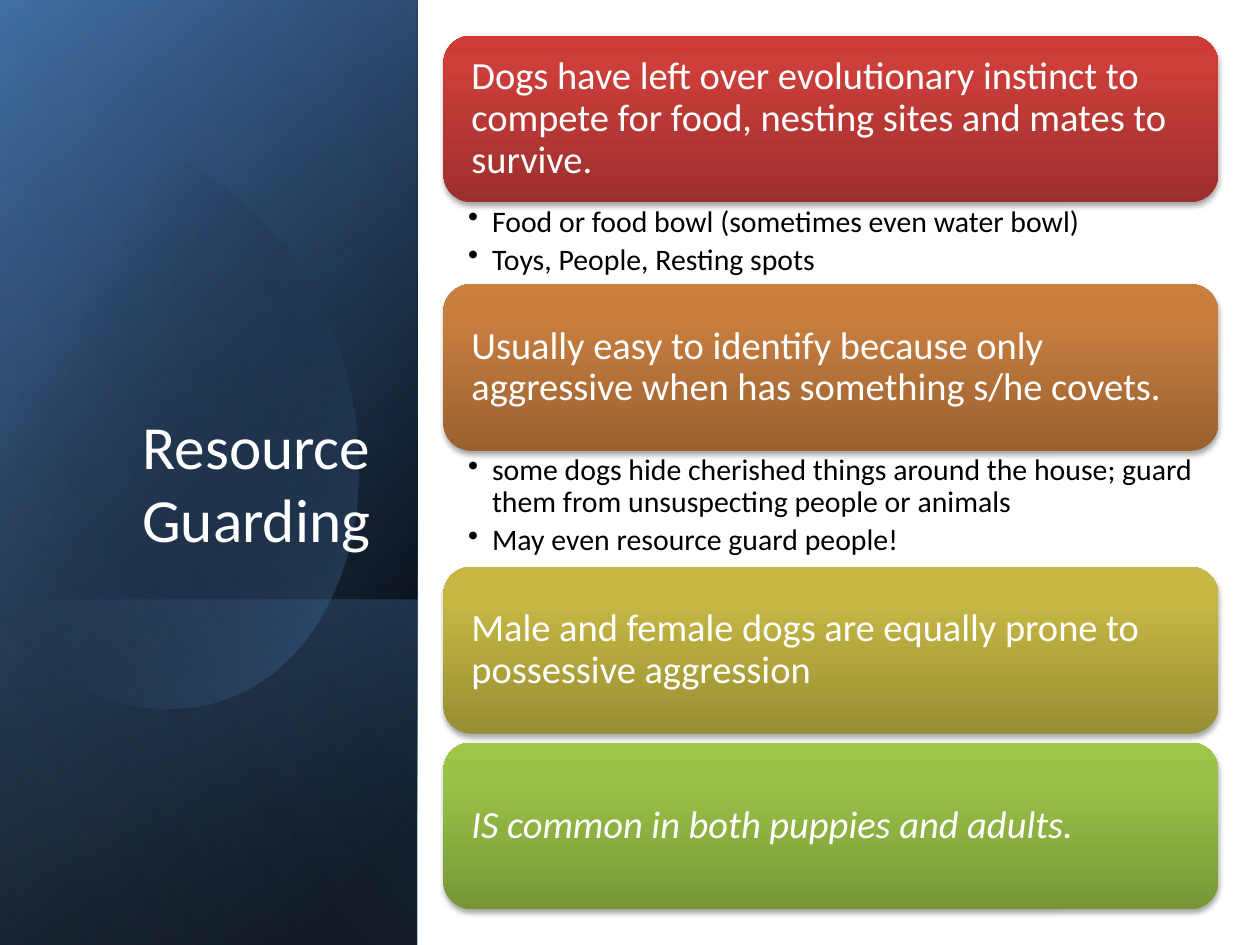
from lxml import etree
from pptx import Presentation
from pptx.dml.color import RGBColor
from pptx.enum.shapes import MSO_SHAPE
from pptx.enum.text import MSO_ANCHOR, PP_ALIGN
from pptx.oxml import parse_xml
from pptx.oxml.ns import qn
from pptx.util import Cm, Pt

RECT, ROUNDED = MSO_SHAPE.RECTANGLE, MSO_SHAPE.ROUNDED_RECTANGLE
TOP, MIDDLE, BOTTOM = MSO_ANCHOR.TOP, MSO_ANCHOR.MIDDLE, MSO_ANCHOR.BOTTOM
LEFT, RIGHT = PP_ALIGN.LEFT, PP_ALIGN.RIGHT
NS = 'xmlns:a="http://schemas.openxmlformats.org/drawingml/2006/main"'


def paint(shape, stops, angle):
    """Fill with a linear gradient of (position %, colour, opacity %) stops, no outline."""
    shape.line.fill.background()
    shape.shadow.inherit = False
    shape.fill.background()
    stop_xml = "".join(
        f'<a:gs pos="{pos * 1000}"><a:srgbClr val="{color}">'
        f'<a:alpha val="{opacity * 1000}"/></a:srgbClr></a:gs>'
        for pos, color, opacity in stops)
    gradient = parse_xml(
        f'<a:gradFill {NS} rotWithShape="1"><a:gsLst>{stop_xml}</a:gsLst>'
        f'<a:lin ang="{angle * 60000}" scaled="0"/></a:gradFill>')
    properties = shape._element.spPr
    properties.replace(properties.find(qn("a:noFill")), gradient)


def write(shape, lines, size, color, anchor, align, insets, spacing=0.9,
          italic=False, bulleted=False):
    """Write one paragraph per line; insets are left, top, right, bottom in cm."""
    frame = shape.text_frame
    left, top, right, bottom = map(Cm, insets)
    frame_format = {"word_wrap": True, "vertical_anchor": anchor, "margin_left": left,
                    "margin_top": top, "margin_right": right, "margin_bottom": bottom}
    for key, value in frame_format.items():
        setattr(frame, key, value)
    for number, line in enumerate(lines):
        paragraph = frame.add_paragraph() if number else frame.paragraphs[0]
        paragraph.alignment = align
        paragraph.line_spacing = spacing
        if bulleted:
            paragraph.space_after = Pt(3.4)
            settings = paragraph._p.get_or_add_pPr()
            settings.set("marL", str(Cm(0.48)))
            settings.set("indent", str(-Cm(0.48)))
            etree.SubElement(settings, qn("a:buChar")).set("char", "•")
        run = paragraph.add_run()
        run.text = line
        for key, value in {"name": "Calibri", "size": Pt(size), "italic": italic}.items():
            setattr(run.font, key, value)
        run.font.color.rgb = RGBColor.from_string(color)


SLIDE_W, SLIDE_H = 25.4, 19.05
prs = Presentation()
prs.slide_width, prs.slide_height = Cm(SLIDE_W), Cm(SLIDE_H)
slide = prs.slides.add_slide(prs.slide_layouts[6])
shapes = slide.shapes

# Left panel: stacked gradients, turned a quarter and standing on the bottom edge
PANEL_W = 8.41
panel_layers = [
    (SLIDE_H, [(8, "000000", 100), (100, "376092", 100)], 50),
    (SLIDE_H, [(0, "000000", 0), (99, "4F81BD", 46)], 30),
    (6.96, [(2, "4F81BD", 29), (100, "000000", 30)], 130),
    ("oval", [(29, "000000", 0), (100, "4F81BD", 43)], 30),
    (SLIDE_H, [(0, "000000", 0), (99, "95B3D7", 11)], 120),
]

# Cut-off oval in cm: a start point, then curves (three points) and lines (one point)
oval_start = (2.44, 2.9)
oval_segments = [
    [(4.34, 3.1), (6.2, 4.88), (6.93, 7.37)],
    [(7.8, 10.46), (6.65, 13.49), (4.34, 14.15)],
    [(2.9, 14.58), (1.35, 13.97), (0.18, 12.7)],
    [(-0.08, 12.4)],
    [(-0.64, 4.22)],
    [(-0.38, 3.91)],
    [(0.05, 3.48), (0.56, 3.18), (1.14, 3)],
    [(1.57, 2.87), (2.01, 2.84), (2.44, 2.9)],
]
STEPS = 16
oval_points = [oval_start]
for segment in oval_segments:
    if len(segment) == 1:
        oval_points += segment
        continue
    corners = [oval_points[-1]] + segment
    for step in range(1, STEPS + 1):
        t = step / STEPS
        weights = ((1 - t) ** 3, 3 * t * (1 - t) ** 2, 3 * t * t * (1 - t), t ** 3)
        oval_points.append(tuple(
            sum(w * corner[axis] for w, corner in zip(weights, corners))
            for axis in (0, 1)))

for height, stops, angle in panel_layers:
    if height == "oval":
        points = [(Cm(x), Cm(y)) for x, y in oval_points]
        builder = shapes.build_freeform(*points[0])
        builder.add_line_segments(points[1:], close=True)
        layer = builder.convert_to_shape()
    else:
        layer = shapes.add_shape(
            RECT, Cm((PANEL_W - height) / 2), Cm(SLIDE_H - (height + PANEL_W) / 2),
            Cm(height), Cm(PANEL_W))
        layer.rotation = 90
        layer._element.spPr.xfrm.set("flipH", "1")
    paint(layer, stops, angle)

# Title
title = shapes.add_textbox(Cm(1.22), Cm(4.67), Cm(6.5), Cm(6.65))
write(title, ["Resource Guarding"], 35, "FFFFFF", BOTTOM, RIGHT,
      (0.25, 0.13, 0.25, 0.13), spacing=1.0)

# Cards, each followed by its bullets or by a small gap
CARD_X, CARD_W, CARD_H, GAP = 8.94, 15.62, 3.36, 0.18
cards = [
    ("Dogs have left over evolutionary instinct to compete for food, nesting sites "
     "and mates to survive.", ("9C2F2D", "CB3E3A", "CE3B37"), 1.65,
     ["Food or food bowl (sometimes even water bowl)", "Toys, People, Resting spots"]),
    ("Usually easy to identify because only aggressive when has something s/he covets.",
     ("9A6130", "C87E3F", "CC7E3C"), 2.34,
     ["some dogs hide cherished things around the house; guard them from "
      "unsuspecting people or animals", "May even resource guard people!"]),
    ("Male and female dogs are equally prone to possessive aggression",
     ("988E34", "C6B843", "C9BB41"), GAP, []),
    ("IS common in both puppies and adults.",
     ("779737", "9BC348", "9DC746"), GAP, []),
]
card_top = 0.72
for statement, colors, space_below, examples in cards:
    card = shapes.add_shape(ROUNDED, Cm(CARD_X), Cm(card_top), Cm(CARD_W), Cm(CARD_H))
    paint(card, [(pos, color, 100) for pos, color in zip((0, 80, 100), colors)], 270)
    card._element.spPr.find(qn("a:effectLst")).append(parse_xml(
        f'<a:outerShdw {NS} blurRad="{Pt(3.1)}" dist="{Pt(1.8)}" dir="5400000" '
        'rotWithShape="0"><a:srgbClr val="000000"><a:alpha val="35000"/></a:srgbClr>'
        '</a:outerShdw>'))
    write(card, [statement], 22, "FFFFFF", MIDDLE, LEFT, (0.4, 0.23, 0.4, 0.23),
          italic=statement.startswith("IS"))
    card_top += CARD_H
    if examples:
        example_list = shapes.add_textbox(
            Cm(CARD_X), Cm(card_top), Cm(CARD_W), Cm(space_below))
        write(example_list, examples, 17, "000000", TOP, LEFT,
              (0.5, 0.08, 0.43, 0.08), bulleted=True)
    card_top += space_below

prs.save("out.pptx")
